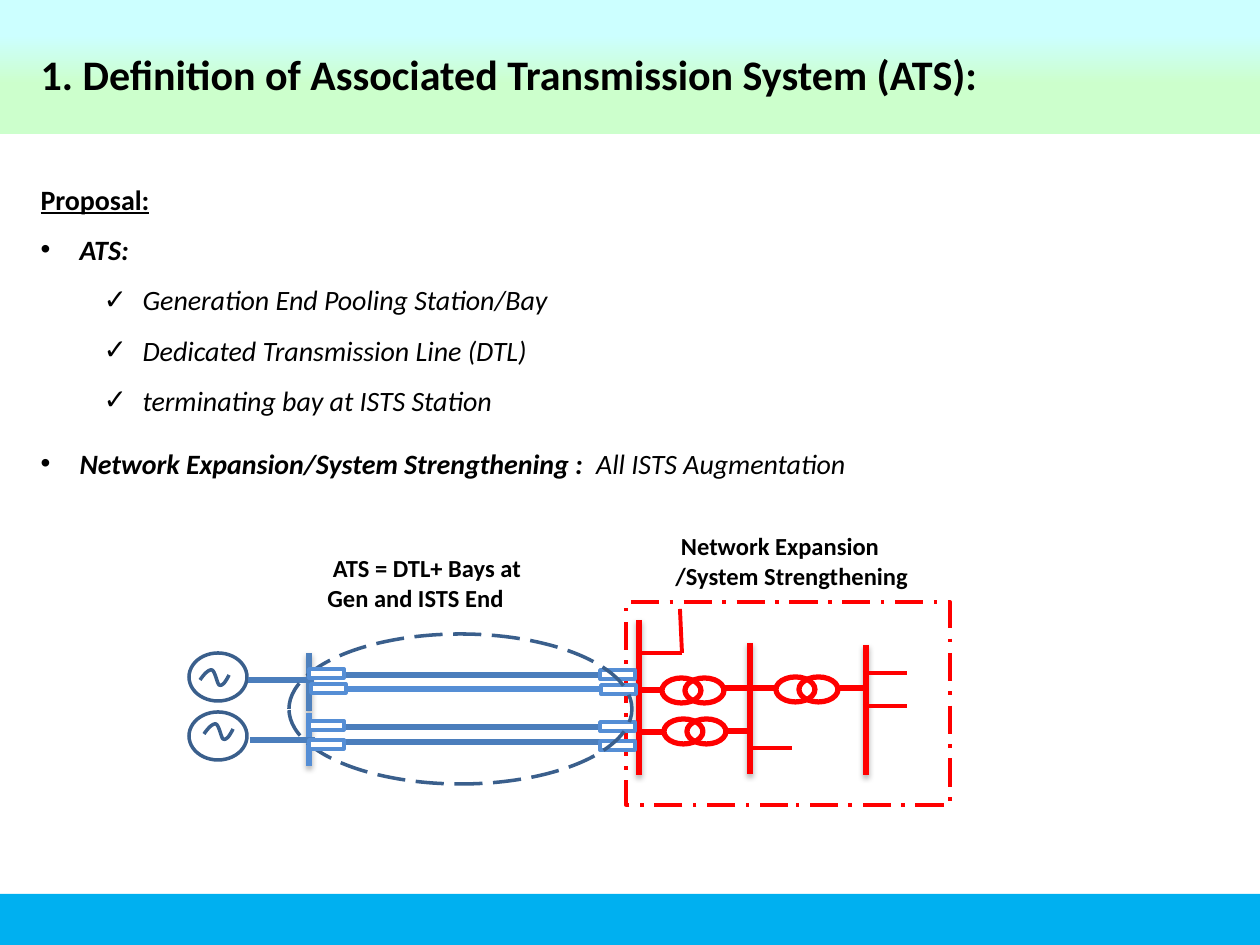
"""Build the slide that defines the Associated Transmission System (ATS)."""
import copy

import pptx
import pptx.dml.color
import pptx.enum.dml
import pptx.enum.shapes
import pptx.enum.text
import pptx.oxml
import pptx.oxml.ns
import pptx.util

RGB = pptx.dml.color.RGBColor
BLACK = RGB(0x00, 0x00, 0x00)
WHITE = RGB(0xFF, 0xFF, 0xFF)
RED = RGB(0xFF, 0x00, 0x00)
NAVY = RGB(0x3A, 0x5F, 0x8C)
STEEL = RGB(0x4B, 0x7E, 0xBC)
BUS_BLUE = RGB(0x4F, 0x81, 0xBD)
SKY = RGB(0x55, 0x8E, 0xD5)
FOOTER_BLUE = RGB(0x00, 0xB0, 0xF0)
PALE_CYAN = RGB(0xCC, 0xFF, 0xFF)
PALE_GREEN = RGB(0xCC, 0xFF, 0xCC)

RECT = pptx.enum.shapes.MSO_SHAPE.RECTANGLE
OVAL = pptx.enum.shapes.MSO_SHAPE.OVAL
STRAIGHT = pptx.enum.shapes.MSO_CONNECTOR.STRAIGHT
DASH = pptx.enum.dml.MSO_LINE
FONT = "Calibri"
NS = pptx.oxml.ns.nsdecls("a")
SHADOW = (
    '<a:outerShdw blurRad="40000" dist="23000" dir="5400000" rotWithShape="0">'
    '<a:srgbClr val="000000"><a:alpha val="35000"/></a:srgbClr></a:outerShdw>'
)


def px(n):
    return pptx.util.Emu(round(n * 914400 / 126))


def write(p, text, size=16, bold=False, italic=False, underline=False):
    r = p.add_run()
    r.text = text
    r.font.name, r.font.size = FONT, pptx.util.Pt(size)
    r.font.bold, r.font.italic, r.font.underline = bold, italic, underline
    r.font.color.rgb = BLACK


def place(sp, x, y, w, h):
    sp.left, sp.top, sp.width, sp.height = px(x), px(y), px(w), px(h)
    tf = sp.text_frame
    tf.word_wrap = True
    tf.auto_size = pptx.enum.text.MSO_AUTO_SIZE.NONE
    tf.vertical_anchor = pptx.enum.text.MSO_ANCHOR.TOP
    return tf


def set_bullet(p, char, margin, hanging):
    pPr = p._p.get_or_add_pPr()
    pPr.set("marL", str(px(margin)))
    pPr.set("indent", str(px(-hanging)))
    tag = f'<a:buChar {NS} char="{char}"/>' if char else f"<a:buNone {NS}/>"
    pPr.append(pptx.oxml.parse_xml(tag))


def add_item(p, runs, char="", level=0, before=0):
    p.level = level
    p.alignment = pptx.enum.text.PP_ALIGN.JUSTIFY
    p.line_spacing = 1.5
    p.space_before = pptx.util.Pt(before)
    set_bullet(p, char, (39 if char else 0) + 63 * level, 39 if char else 0)
    for text, fmt in runs:
        write(p, text, **fmt)


def add_shape(s, kind, x, y, w, h, fill=None, line=None, width=2, dash=None):
    sp = s.shapes.add_shape(kind, px(x), px(y), px(w), px(h))
    style(sp, fill, line, width, dash)
    return sp


def style(sp, fill, line, width, dash=None):
    sp.shadow.inherit = False
    if fill is None:
        sp.fill.background()
    else:
        sp.fill.solid()
        sp.fill.fore_color.rgb = fill
    if line is None:
        sp.line.fill.background()
    else:
        sp.line.color.rgb = line
        sp.line.width = pptx.util.Pt(width)
        if dash is not None:
            sp.line.dash_style = dash


def add_line(s, x1, y1, x2, y2, color, width=3, shadow=""):
    c = s.shapes.add_connector(STRAIGHT, px(x1), px(y1), px(x2), px(y2))
    c.line.color.rgb = color
    c.line.width = pptx.util.Pt(width)
    effect = f"<a:effectLst {NS}>{shadow}</a:effectLst>"
    c._element.spPr.append(pptx.oxml.parse_xml(effect))


def add_bands(s):
    header = add_shape(s, RECT, 0, 0, 1260, 134)
    header.fill.gradient()
    header.fill.gradient_angle = 270
    stops = header._element.spPr.find(".//" + pptx.oxml.ns.qn("a:gsLst"))
    for stop in list(stops):
        stops.append(copy.deepcopy(stop))
    colors = [(0, PALE_CYAN), (0.26, PALE_CYAN), (0.63, PALE_GREEN), (1, PALE_GREEN)]
    for stop, (position, color) in zip(header.fill.gradient_stops, colors):
        stop.position = position
        stop.color.rgb = color
    footer = add_shape(s, RECT, 0, 894, 1260, 51, FOOTER_BLUE)
    for sp in (header, footer):
        s.shapes._spTree.insert(2, sp._element)


def add_sine(s, x, y):
    knots = [(0, 10), (4, 4), (9, -1), (12, 0), (15, 1), (17, 13), (19, 15),
             (23, 17), (27, 9), (29, 5)]
    points = []
    for i in range(0, len(knots) - 1, 3):
        for t in (k / 8 for k in range(9)):
            weights = ((1 - t) ** 3, 3 * t * (1 - t) ** 2, 3 * t * t * (1 - t), t ** 3)
            curve = list(zip(weights, knots[i:i + 4]))
            points.append((px(x + sum(w * k[0] for w, k in curve)),
                           px(y + sum(w * k[1] for w, k in curve))))
    builder = s.shapes.build_freeform(*points[0])
    builder.add_line_segments(points[1:], close=False)
    style(builder.convert_to_shape(), None, NAVY, 2)


def add_label(s, text, x, y, w):
    tf = place(s.shapes.add_textbox(0, 0, 0, 0), x, y, w, 72)
    write(tf.paragraphs[0], text, size=14, bold=True)


def add_text(s):
    title, body = s.shapes.title, s.placeholders[1]
    p = place(title, 28, 42, 1173, 63).paragraphs[0]
    p.alignment = pptx.enum.text.PP_ALIGN.LEFT
    write(p, "1. Definition of Associated Transmission System (ATS):", size=24, bold=True)
    tf = place(body, 28, 159, 1133, 325)
    strong, plain = {"bold": True, "italic": True}, {"italic": True}
    add_item(tf.paragraphs[0], [("Proposal:", {"bold": True, "underline": True})])
    add_item(tf.add_paragraph(), [("ATS:", strong)], "•")
    for text in ("Generation End Pooling Station/Bay", "Dedicated Transmission Line (DTL)",
                 "terminating bay at ISTS Station"):
        add_item(tf.add_paragraph(), [(text, plain)], "✓", level=1)
    add_item(tf.add_paragraph(), [("Network Expansion/System Strengthening :  ", strong),
                                  ("All ISTS Augmentation", plain)], "•", before=7)


def add_generation(s):
    for top, bottom, color in ((653, 711, BUS_BLUE), (713, 766, SKY)):
        add_line(s, 309, top, 309, bottom, color, shadow=SHADOW)
    for y in (653, 712):
        add_shape(s, OVAL, 189, y, 58, 48, WHITE, NAVY)
    for x1, x2, y, color in ((248, 314, 680, STEEL), (250, 315, 740, STEEL),
                             (315, 601, 675, STEEL), (312, 616, 689, SKY),
                             (314, 614, 727, STEEL), (312, 612, 742, STEEL)):
        add_line(s, x1, y, x2, y, color)
    add_sine(s, 200, 670)
    add_sine(s, 204, 724)


def add_network(s):
    for x, top, bottom in ((639, 620, 775), (750, 643, 774), (866, 645, 775)):
        add_line(s, x, top, x, bottom, RED, shadow=SHADOW)
    for x, y in ((662, 678), (776, 677), (664, 719)):
        for winding_x in (x, x + 23):
            add_shape(s, OVAL, winding_x, y, 39, 25, None, RED, 3)
    for x1, x2, y in ((636, 662, 690), (725, 750, 688), (750, 775, 688),
                      (840, 866, 688), (639, 664, 732), (727, 752, 731)):
        add_line(s, x1, y, x2, y, RED)
    for feeder in ((863, 673, 907, 673), (863, 706, 907, 706), (748, 748, 792, 748),
                   (639, 653, 682, 653), (682, 653, 680, 609)):
        add_line(s, *feeder, RED, 2.25)
    add_shape(s, RECT, 626, 602, 324, 203, None, RED, 2, DASH.LONG_DASH_DOT)


def add_bays(s, positions):
    for x, y in positions:
        add_shape(s, RECT, x, y, 35, 9, WHITE, SKY)


def main():
    prs = pptx.Presentation()
    prs.slide_width, prs.slide_height = px(1260), px(945)
    s = prs.slides.add_slide(prs.slide_layouts[1])
    add_bands(s)
    add_text(s)
    add_generation(s)
    add_network(s)
    add_bays(s, [(600, 670), (601, 685), (600, 722), (600, 741)])
    add_shape(s, OVAL, 289, 634, 343, 150, None, NAVY, 2, DASH.LONG_DASH)
    add_bays(s, [(309, 669), (311, 684), (309, 721), (309, 740)])
    add_label(s, " ATS = DTL+ Bays at Gen and ISTS End", 315, 547, 226)
    add_label(s, " Network Expansion /System Strengthening", 663, 525, 278)
    prs.save("out.pptx")


if __name__ == "__main__":
    main()
